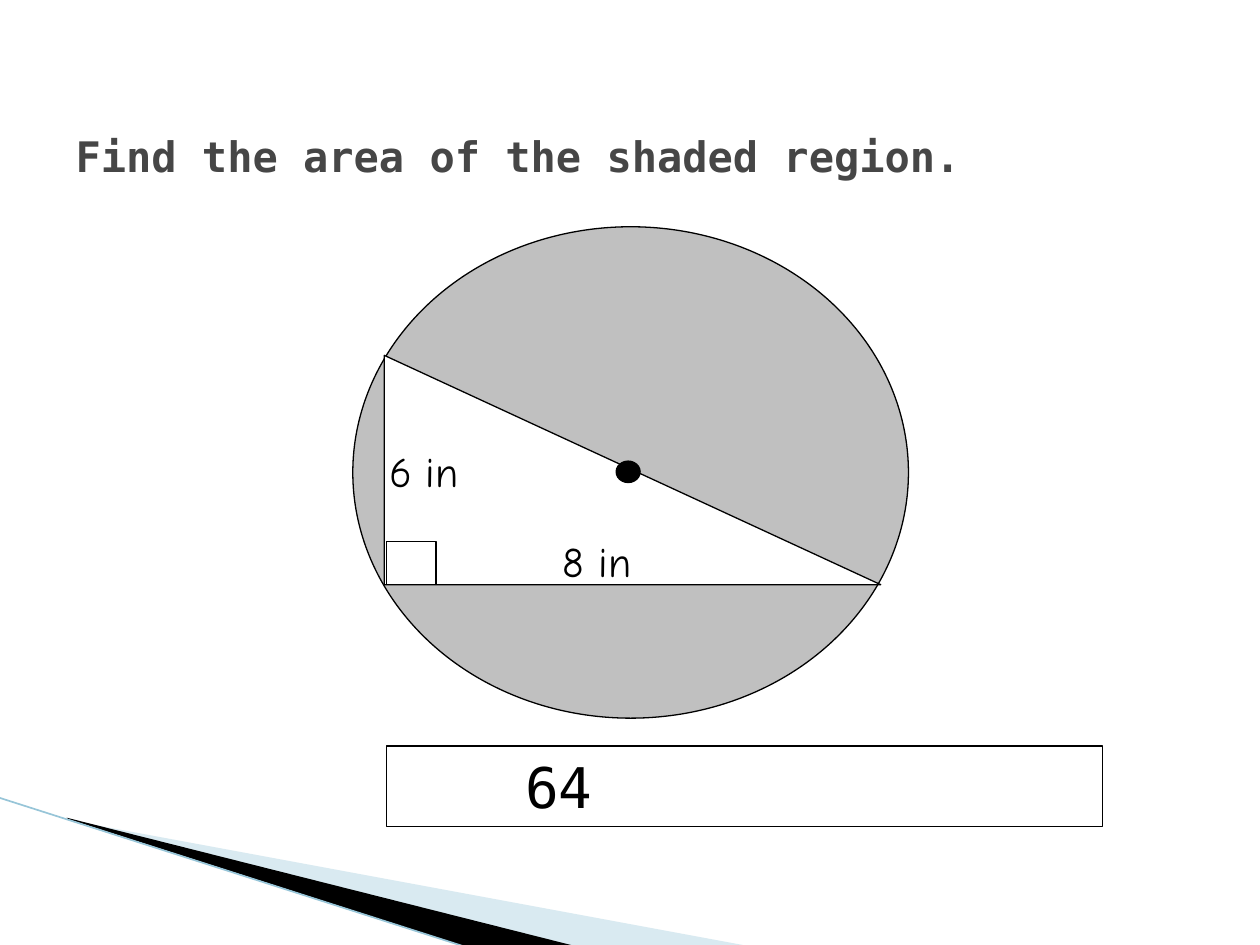
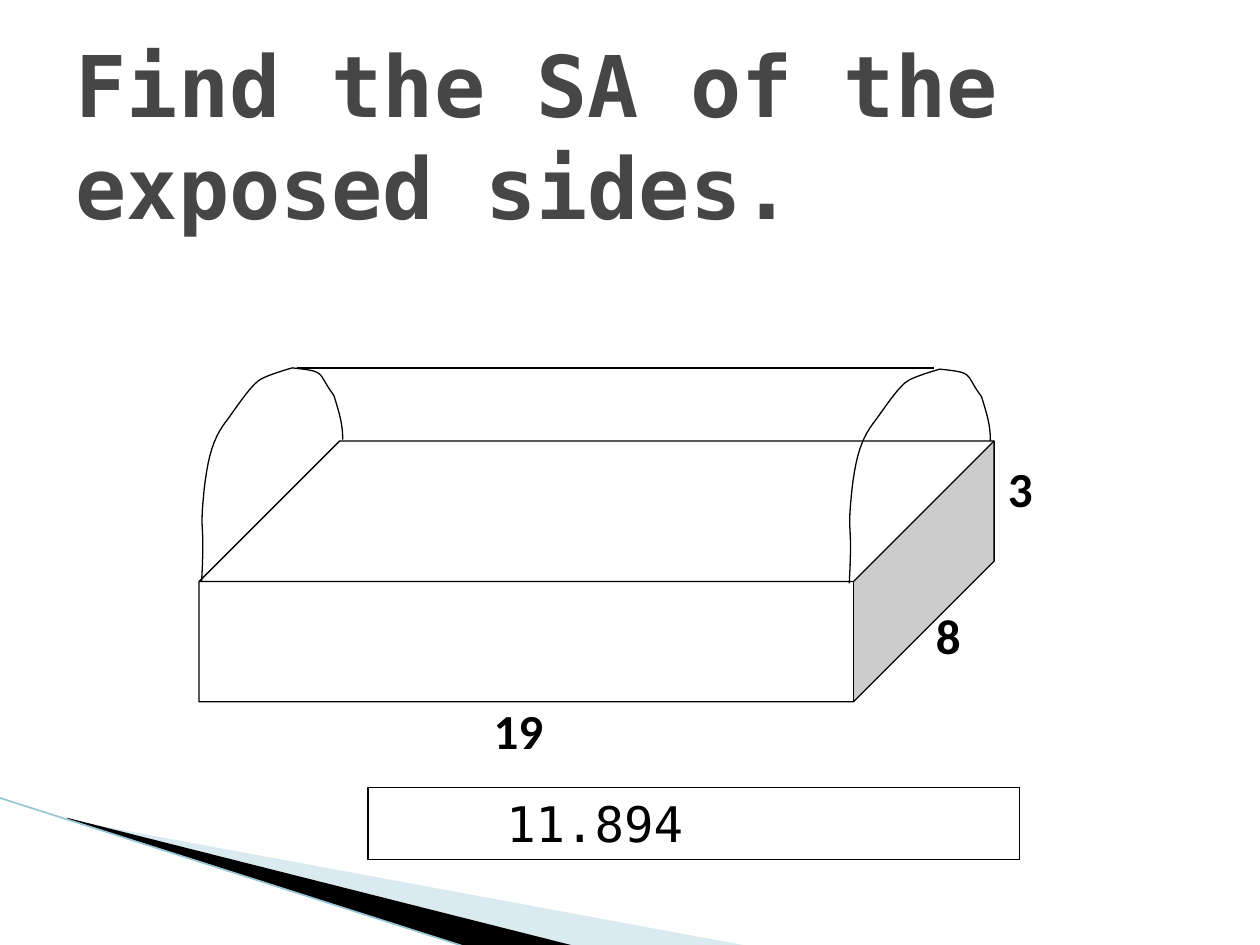
import dataclasses
import typing

import lxml.etree
import pptx
import pptx.dml.color
import pptx.enum.shapes
import pptx.enum.text
import pptx.oxml.ns
import pptx.shapes.autoshape
import pptx.shapes.shapetree
import pptx.slide
import pptx.text.text
import pptx.util

RGB = pptx.dml.color.RGBColor
MSO = pptx.enum.shapes.MSO_SHAPE
Shapes = typing.Union[pptx.shapes.shapetree.SlideShapes, pptx.shapes.shapetree.GroupShapes]
Point = tuple[float, float]

BLACK = RGB(0x00, 0x00, 0x00)
WHITE = RGB(0xFF, 0xFF, 0xFF)
SHADE = RGB(0xC0, 0xC0, 0xC0)
TITLE_GREY = RGB(0x46, 0x46, 0x46)
BAND_BLUE = RGB(0xA0, 0xCB, 0xDC)
EDGE_BLUE = RGB(0x97, 0xC5, 0xD8)
MONO = "DejaVu Sans Mono"

# The slide is a grid of 100 columns by 75 rows
WIDTH, HEIGHT = pptx.util.Inches(10), pptx.util.Inches(7.5)
COL, ROW = WIDTH / 100, HEIGHT / 75


@dataclasses.dataclass(frozen=True)
class Box:
    left: float
    top: float
    width: float
    height: float

    def emu(self) -> tuple[int, int, int, int]:
        return (round(self.left * COL), round(self.top * ROW),
                round(self.width * COL), round(self.height * ROW))


@dataclasses.dataclass(frozen=True)
class TextStyle:
    font: str
    size: float
    bold: bool = False
    color: RGB = BLACK
    space_after: float = 0


@dataclasses.dataclass(frozen=True)
class Label:
    text: str
    box: Box


@dataclasses.dataclass(frozen=True)
class Solid:
    kind: MSO
    box: Box
    fill: RGB
    adjustment: typing.Optional[float] = None


CIRCLE_LABEL = TextStyle("Comic Neue", 24)
BOX_LABEL = TextStyle("Calibri", 28, bold=True, space_after=10)

CIRCLE_FIGURE = [
    Solid(MSO.OVAL, Box(28, 18, 44.1, 39), SHADE),
    Solid(MSO.RIGHT_TRIANGLE, Box(30.5, 28.2, 39.4, 18.2), WHITE),
    Solid(MSO.RECTANGLE, Box(30.7, 43, 3.9, 3.4), WHITE),
    Solid(MSO.OVAL, Box(48.9, 36.6, 1.9, 1.7), BLACK),
]
CIRCLE_SIDES = [
    Label("6 in", Box(29.9, 34.9, 11, 6.1)),
    Label("8 in", Box(43.7, 42, 10.6, 5.2)),
]
CHEST_FIGURE = [Solid(MSO.CUBE, Box(15.8, 35, 63.1, 20.7), WHITE, 0.539)]
CHEST_SIDES = [
    Label("8", Box(73.3, 47.6, 16.8, 8.3)),
    Label("3", Box(79, 35.9, 16.8, 8.3)),
    Label("19", Box(38.2, 55.1, 16.8, 8.3)),
]

# Lid end: a start point, then Bezier segments of two controls and an end
LID_START = (16, 46.2)
LID_CURVES = [
    ((16.3, 40.9), (15.8, 42.8), (16.2, 38.9)),
    ((16.5, 36.1), (17, 34.7), (17.9, 33.5)),
    ((18.4, 32.9), (19.9, 30.5), (20.7, 30.1)),
    ((21.4, 29.7), (23.2, 29.2), (23.2, 29.2)),
    ((26, 29.5), (25.1, 29.5), (26.5, 31.4)),
    ((27, 33), (27.2, 33.7), (27.2, 34.9)),
]
LID_SHIFTS = [(51.4, 0.1), (0, 0)]
CURVE_STEPS = 10


def paint(shape: pptx.shapes.autoshape.Shape, fill: RGB | None, line: RGB | None) -> None:
    shape.shadow.inherit = False
    if fill is None:
        shape.fill.background()
    else:
        shape.fill.solid()
        shape.fill.fore_color.rgb = fill
    if line is None:
        shape.line.fill.background()
    else:
        shape.line.color.rgb = line
        shape.line.width = pptx.util.Pt(0.75)


def add_outline(shapes: Shapes, points: list[Point], closed: bool = False) -> pptx.shapes.autoshape.Shape:
    (x, y), *rest = [(round(c * COL), round(r * ROW)) for c, r in points]
    builder = shapes.build_freeform(x, y)
    builder.add_line_segments(rest, close=closed)
    return builder.convert_to_shape()


def add_line(shapes: Shapes, start: Point, end: Point, color: RGB, width: float) -> typing.Any:
    ends = [round(v) for c, r in (start, end) for v in (c * COL, r * ROW)]
    line = shapes.add_connector(pptx.enum.shapes.MSO_CONNECTOR.STRAIGHT, *ends)
    line.line.color.rgb = color
    line.line.width = pptx.util.Pt(width)
    lxml.etree.SubElement(line.element.spPr, pptx.oxml.ns.qn("a:effectLst"))
    return line


def write(tf: pptx.text.text.TextFrame, text: str, style: TextStyle) -> None:
    tf.word_wrap = True
    p = tf.paragraphs[0]
    p.text = text
    p.alignment = pptx.enum.text.PP_ALIGN.LEFT
    if style.space_after:
        p.space_after = pptx.util.Pt(style.space_after)
    p.font.name = style.font
    p.font.size = pptx.util.Pt(style.size)
    p.font.bold = style.bold
    p.font.color.rgb = style.color


def add_figure(s: pptx.slide.Slide, solids: list[Solid], labels: list[Label],
               style: TextStyle) -> pptx.shapes.shapetree.GroupShapes:
    """Draw a labelled drawing as one group and return the group's shapes."""
    shapes = s.shapes.add_group_shape().shapes
    for solid in solids:
        sp = shapes.add_shape(solid.kind, *solid.box.emu())
        paint(sp, solid.fill, BLACK)
        if solid.adjustment is not None:
            sp.adjustments[0] = solid.adjustment
    for label in labels:
        write(shapes.add_textbox(*label.box.emu()).text_frame, label.text, style)
    return shapes


def add_answer(s: pptx.slide.Slide, answer: Label, size: float) -> None:
    sp = s.shapes.add_shape(MSO.RECTANGLE, *answer.box.emu())
    paint(sp, None, BLACK)
    tf = sp.text_frame
    tf.vertical_anchor = pptx.enum.text.MSO_ANCHOR.TOP
    write(tf, "\t\t" + answer.text, TextStyle(MONO, size))
    tf.auto_size = pptx.enum.text.MSO_AUTO_SIZE.SHAPE_TO_FIT_TEXT


def set_title(s: pptx.slide.Slide, text: str, height: float, size: float) -> None:
    title = s.shapes.title
    title.left, title.top, title.width, title.height = Box(5, 3, 90, height).emu()
    tf = title.text_frame
    tf.vertical_anchor = pptx.enum.text.MSO_ANCHOR.MIDDLE
    write(tf, text, TextStyle(MONO, size, bold=True, color=TITLE_GREY))
    tf.auto_size = pptx.enum.text.MSO_AUTO_SIZE.NONE


def move_bands_to_layout(s: pptx.slide.Slide) -> None:
    """Draw the corner bands and hand them to the layout all slides share."""
    layout = s.slide_layout
    for ph in list(layout.placeholders):
        if ph.placeholder_format.type != pptx.enum.shapes.PP_PLACEHOLDER.TITLE:
            ph.element.getparent().remove(ph.element)
    pale = add_outline(s.shapes, [(5.5, 65.1), (59.5, 75.1), (45.6, 75.1), (5.5, 65)], True)
    paint(pale, BAND_BLUE, None)
    color = next(pale.element.spPr.iter(pptx.oxml.ns.qn("a:srgbClr")))
    lxml.etree.SubElement(color, pptx.oxml.ns.qn("a:alpha"), val="40000")
    dark = add_outline(s.shapes, [(5.3, 64.9), (45.7, 75.1), (37.2, 75.2), (5.4, 65)], True)
    paint(dark, BLACK, None)
    edge = add_line(s.shapes, (-0.1, 63.3), (37.1, 75.2), EDGE_BLUE, 0.95)
    for band in (pale, dark, edge):
        layout.shapes.element.append(band.element)


def lid_points(dx: float, dy: float) -> list[Point]:
    """Sample the lid's Bezier curves, shifted across the grid."""
    points = [LID_START]
    for a, b, end in LID_CURVES:
        start = points[-1]
        for step in range(1, CURVE_STEPS + 1):
            t = step / CURVE_STEPS
            u = 1 - t
            weights = (u ** 3, 3 * u * u * t, 3 * u * t * t, t ** 3)
            points.append(tuple(sum(w * v for w, v in zip(weights, axis))
                                for axis in zip(start, a, b, end)))
    return [(x + dx, y + dy) for x, y in points]


def build_circle(s: pptx.slide.Slide) -> None:
    set_title(s, "Find the area of the shaded region.", 18.7, 24)
    add_figure(s, CIRCLE_FIGURE, CIRCLE_SIDES, CIRCLE_LABEL)
    add_answer(s, Label("64", Box(30.7, 59.2, 56.8, 6.4)), 32)


def build_chest(s: pptx.slide.Slide) -> None:
    set_title(s, "Find the SA of the exposed sides.", 15.3, 48.6)
    shapes = add_figure(s, CHEST_FIGURE, CHEST_SIDES, BOX_LABEL)
    for shift in LID_SHIFTS:
        paint(add_outline(shapes, lid_points(*shift)), None, BLACK)
    add_line(shapes, (23.6, 29.2), (74.1, 29.2), BLACK, 0.75)
    add_answer(s, Label("11.894", Box(29.2, 62.5, 51.7, 5.7)), 28)


def main() -> None:
    prs = pptx.Presentation()
    prs.slide_width, prs.slide_height = WIDTH, HEIGHT
    title_only = prs.slide_layouts.get_by_name("Title Only")
    circle, chest = (prs.slides.add_slide(title_only) for _ in range(2))
    move_bands_to_layout(circle)
    build_circle(circle)
    build_chest(chest)
    prs.save("out.pptx")


if __name__ == "__main__":
    main()
